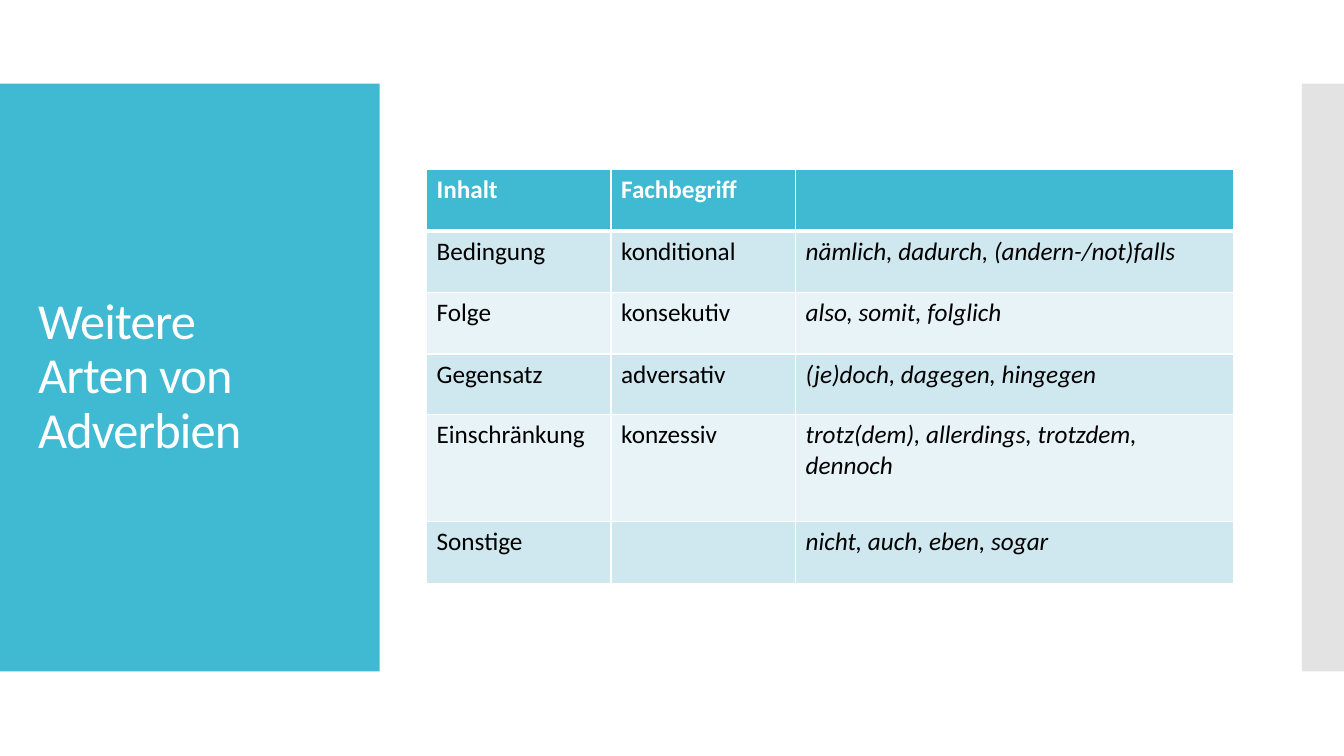
"""Build a slide with a side title and a table of German adverb types."""
from lxml.etree import SubElement
from pptx import Presentation
from pptx.dml.color import RGBColor
from pptx.enum.shapes import MSO_SHAPE
from pptx.enum.text import MSO_ANCHOR
from pptx.oxml.ns import qn
from pptx.util import Cm, Pt

TITLE = ["Weitere", "Arten von Adverbien"]
ROWS = [
    ("Inhalt", "Fachbegriff", ""),
    ("Bedingung", "konditional", "nämlich, dadurch, (andern-/not)falls"),
    ("Folge", "konsekutiv", "also, somit, folglich"),
    ("Gegensatz", "adversativ", "(je)doch, dagegen, hingegen"),
    ("Einschränkung", "konzessiv", "trotz(dem), allerdings, trotzdem, dennoch"),
    ("Sonstige", "", "nicht, auch, eben, sogar"),
]
COLORS = {"teal": "40BAD2", "gray": "C8C8C8", "white": "FFFFFF",
          "black": "000000", "dark": "CFE7EE", "light": "E8F3F7"}
WIDTHS = [4.65, 4.65, 11.04]
HEIGHTS = [1.55, 1.55, 1.55, 1.53, 2.7, 1.55]
PANELS = [(0, 9.57, "teal"), (32.81, 1.06, "gray")]


def color(name):
    """Return the named colour."""
    return RGBColor.from_string(COLORS[name])


def paint(item, name):
    """Fill a shape or a cell with one colour."""
    item.fill.solid()
    item.fill.fore_color.rgb = color(name)


def style(font, tint, **values):
    """Set the font, its colour and other values."""
    font.color.rgb = color(tint)
    for key, value in {"name": "Calibri", **values}.items():
        setattr(font, key, value)


def border(cell, row):
    """Draw white cell edges, thick under the header."""
    props = cell._tc.get_or_add_tcPr()
    for side in "LRTB":
        thick = (row, side) in [(0, "B"), (1, "T")]
        line = SubElement(props, qn(f"a:ln{side}"), w=str(Pt(3 if thick else 1)))
        fill = SubElement(line, qn("a:solidFill"))
        SubElement(fill, qn("a:srgbClr"), val=COLORS["white"])


def add_panels(slide):
    """Add the two side panels, the gray one half clear."""
    for left, width, name in PANELS:
        panel = slide.shapes.add_shape(
            MSO_SHAPE.RECTANGLE, Cm(left), Cm(2.11), Cm(width), Cm(14.81))
        panel.shadow.inherit = False
        panel.line.fill.background()
        paint(panel, name)
        if name == "gray":
            tone = panel._element.spPr.find(".//" + qn("a:srgbClr"))
            SubElement(tone, qn("a:alpha"), val="50000")


def add_title(slide):
    """Add the title over the teal panel."""
    frame = slide.shapes.add_textbox(Cm(0.71), Cm(3.12), Cm(8.18), Cm(12.78)).text_frame
    frame.word_wrap = True
    frame.vertical_anchor = MSO_ANCHOR.MIDDLE
    para = frame.paragraphs[0]
    para.line_spacing = 0.9
    for i, text in enumerate(TITLE):
        if i:
            para.add_line_break()
        run = para.add_run()
        run.text = text
        style(run.font, "white", size=Pt(36))
        run._r.get_or_add_rPr().set("spc", "-60")


def add_grid(slide):
    """Add the table of adverb types."""
    table = slide.shapes.add_table(
        len(ROWS), len(WIDTHS), Cm(10.75), Cm(4.27),
        Cm(sum(WIDTHS)), Cm(sum(HEIGHTS))).table
    for col, width in zip(table.columns, WIDTHS):
        col.width = Cm(width)
    for r, (texts, height) in enumerate(zip(ROWS, HEIGHTS)):
        table.rows[r].height = Cm(height)
        head = r == 0
        for c, text in enumerate(texts):
            cell = table.cell(r, c)
            border(cell, r)
            paint(cell, "teal" if head else "dark" if r % 2 else "light")
            cell.text = text
            style(cell.text_frame.paragraphs[0].font, "white" if head else "black",
                  size=Pt(18), bold=head, italic=not head and c == 2)
            for run in cell.text_frame.paragraphs[0].runs:
                style(run.font, "white" if head else "black",
                      size=Pt(18), bold=head, italic=not head and c == 2)


def main():
    """Build and save the slide."""
    deck = Presentation()
    deck.slide_width, deck.slide_height = Cm(33.87), Cm(19.05)
    slide = deck.slides.add_slide(deck.slide_layouts[6])
    add_panels(slide)
    add_title(slide)
    add_grid(slide)
    deck.save("out.pptx")


if __name__ == "__main__":
    main()
